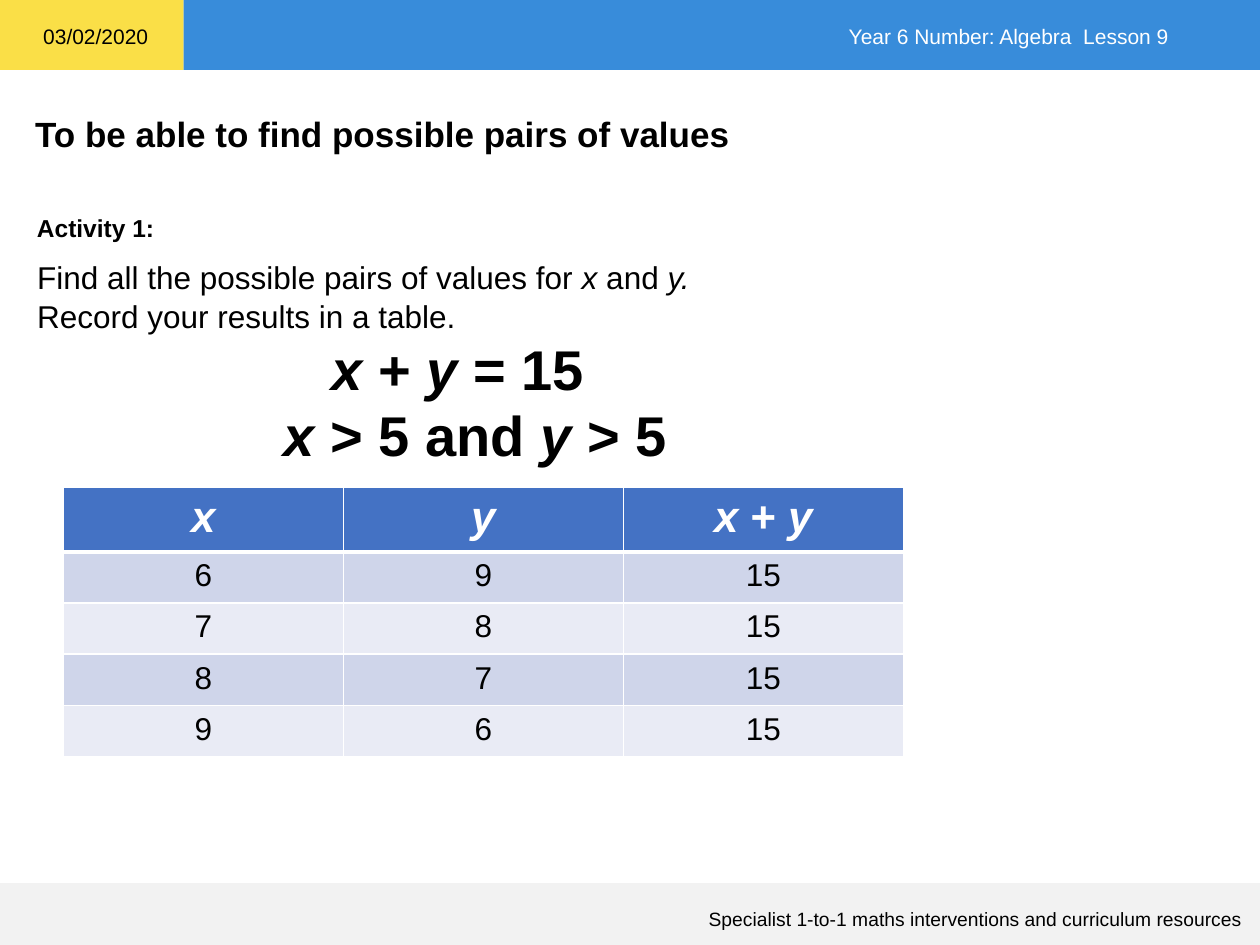
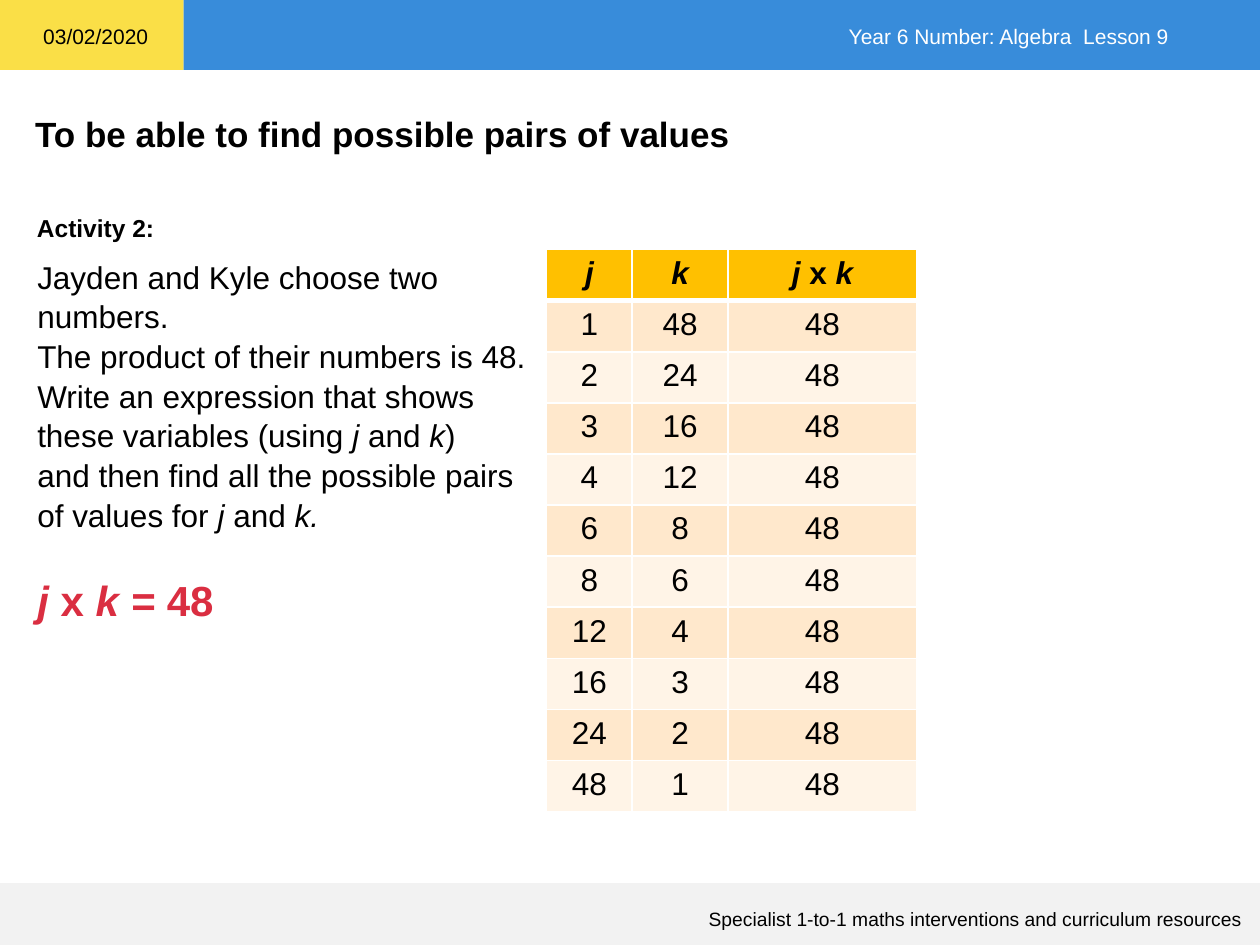
from dataclasses import dataclass

from lxml import etree
from pptx import Presentation
from pptx import util as u
from pptx.dml import color
from pptx.enum import shapes, text
from pptx.oxml import ns

FONT = "Arial"
COLORS = {
    "white": "FFFFFF", "black": "000000", "red": "DA2E41",
    "date": "FADF47", "lesson": "388CDA", "footer": "F2F2F2",
    "blue_head": "4472C4", "blue_dark": "CFD5EA", "blue_light": "E9EBF5",
    "gold_head": "FFC000", "gold_dark": "FFE8CC", "gold_light": "FFF4E7",
}
LEFT, RIGHT, CENTER = text.PP_ALIGN.LEFT, text.PP_ALIGN.RIGHT, text.PP_ALIGN.CENTER
ROW_HEIGHT = 29.2


@dataclass
class Area:
    left: float
    top: float
    width: float
    height: float

    def lengths(self) -> list:
        return [u.Pt(n) for n in (self.left, self.top, self.width, self.height)]


@dataclass
class Line:
    """A paragraph; parts between asterisks are italic."""
    words: str
    size: float = 18
    bold: bool = False
    color: str = "black"
    align: int = LEFT
    spacing: float = 1.0
    before: float = 0


@dataclass
class TextBox:
    area: Area
    lines: list


@dataclass
class ValueTable:
    left: float
    top: float
    columns: list
    header: list
    header_size: float
    header_height: float
    header_color: str
    palette: str
    rows: list


@dataclass
class Activity:
    boxes: list
    table: ValueTable


def rgb(name: str) -> color.RGBColor:
    return color.RGBColor.from_string(COLORS[name])


def write_line(para, line: Line) -> None:
    para.alignment = line.align
    para.line_spacing = line.spacing
    if line.before:
        para.space_before = u.Pt(line.before)
    for index, words in enumerate(line.words.split("*")):
        if not words:
            continue
        span = para.add_run()
        span.text = words
        style = {"name": FONT, "size": u.Pt(line.size),
                 "bold": line.bold, "italic": index % 2 == 1}
        for key, value in style.items():
            setattr(span.font, key, value)
        span.font.color.rgb = rgb(line.color)


def add_text(page, box: TextBox) -> None:
    frame = page.shapes.add_textbox(*box.area.lengths()).text_frame
    frame.word_wrap = True
    for index, line in enumerate(box.lines):
        write_line(frame.add_paragraph() if index else frame.paragraphs[0], line)


def add_band(page, area: Area, fill: str):
    band = page.shapes.add_shape(shapes.MSO_SHAPE.RECTANGLE, *area.lengths())
    band.shadow.inherit = False
    band.fill.solid()
    band.fill.fore_color.rgb = rgb(fill)
    band.line.fill.background()
    return band


def add_borders(cell, widths: dict) -> None:
    properties = cell._tc.get_or_add_tcPr()
    for side, width in widths.items():
        edge = etree.SubElement(properties, ns.qn(f"a:ln{side}"), w=str(u.Pt(width)))
        fill = etree.SubElement(edge, ns.qn("a:solidFill"))
        etree.SubElement(fill, ns.qn("a:srgbClr"), val=COLORS["white"])


def add_values(page, values: ValueTable) -> None:
    grid = [values.header] + values.rows
    height = values.header_height + ROW_HEIGHT * len(values.rows)
    area = Area(values.left, values.top, sum(values.columns), height)
    table = page.shapes.add_table(len(grid), len(values.columns), *area.lengths()).table
    table.horz_banding = False
    for column, width in zip(table.columns, values.columns):
        column.width = u.Pt(width)
    for number, entries in enumerate(grid):
        is_header = number == 0
        table.rows[number].height = u.Pt(values.header_height if is_header else ROW_HEIGHT)
        shade = "head" if is_header else "dark" if number % 2 else "light"
        borders = {"L": 1, "R": 1, "T": 3 if number == 1 else 1, "B": 3 if is_header else 1}
        for place, entry in enumerate(entries):
            cell = table.cell(number, place)
            add_borders(cell, borders)
            cell.fill.solid()
            cell.fill.fore_color.rgb = rgb(f"{values.palette}_{shade}")
            size = values.header_size if is_header else 18
            ink = values.header_color if is_header else "black"
            write_line(cell.text_frame.paragraphs[0],
                       Line(str(entry), size, is_header, ink, CENTER))


def add_frame(page, number: int) -> None:
    # Bands
    add_band(page, Area(0, 0, 105, 40), "date")
    lesson = add_band(page, Area(105, 0, 615, 40), "lesson").text_frame
    lesson.margin_right = u.Pt(52)
    lesson.margin_top = u.Pt(5)
    lesson.vertical_anchor = text.MSO_ANCHOR.MIDDLE
    write_line(lesson.paragraphs[0],
               Line("Year 6 Number: Algebra  Lesson 9", 12, color="white", align=RIGHT))
    add_band(page, Area(0, 504.6, 720, 35.4), "footer")

    # Footer, title, date and activity heading
    for box in (
        TextBox(Area(30, 514.7, 687, 20), [Line(
            "Specialist 1-to-1 maths interventions and curriculum resources", 11, align=RIGHT)]),
        TextBox(Area(13, 60.5, 703, 32),
                [Line("To be able to find possible pairs of values", 20, True)]),
        TextBox(Area(17.6, 9.7, 84, 22), [Line("03/02/2020", 12)]),
        TextBox(Area(14, 118.4, 110, 24), [Line(f"Activity {number}:", 14, True)]),
    ):
        add_text(page, box)


def body(*sentences: str) -> list:
    return [Line(words, spacing=1.05) for words in sentences]


def pairs(first_values: list, combine) -> list:
    """Rows of both values and their result, the second column being the first reversed."""
    return [[a, b, combine(a, b)] for a, b in zip(first_values, reversed(first_values))]


ACTIVITIES = [
    Activity(
        [TextBox(Area(14.2, 142.6, 692, 52), body(
            "Find all the possible pairs of values for *x *and *y.*",
            "Record your results in a table.")),
         TextBox(Area(154.8, 225.4, 242, 46), [Line("*x > *5 and *y *> 5", 32, True)]),
         TextBox(Area(182.2, 187.4, 187, 46), [Line("*x + y* = 15", 32, True)])],
        ValueTable(36.2, 278.2, [160] * 3, ["*x*", "*y*", "*x* + *y*"], 25, 36,
                   "white", "blue", pairs([6, 7, 8, 9], lambda x, y: x + y)),
    ),
    Activity(
        [TextBox(Area(14.2, 142.6, 298, 212), body(
            "Jayden and Kyle choose two",
            "numbers.",
            "The product of their numbers is 48.",
            "Write an expression that shows",
            "these variables (using *j* and *k*)",
            "and then find all the possible pairs",
            "of values for *j* and *k.*",
        ) + [Line("*j *x* k = *48", 24, True, "red", spacing=1.05, before=21.7)])],
        ValueTable(312.4, 142.6, [48.8, 54.8, 108], ["*j*", "*k*", "*j* x *k*"], 18, ROW_HEIGHT,
                   "black", "gold",
                   pairs([1, 2, 3, 4, 6, 8, 12, 16, 24, 48], lambda j, k: j * k)),
    ),
]


def main() -> None:
    deck = Presentation()
    deck.slide_width, deck.slide_height = u.Pt(720), u.Pt(540)
    for number, activity in enumerate(ACTIVITIES, 1):
        page = deck.slides.add_slide(deck.slide_layouts[6])
        add_frame(page, number)
        for box in activity.boxes:
            add_text(page, box)
        add_values(page, activity.table)
    deck.save("out.pptx")


if __name__ == "__main__":
    main()
